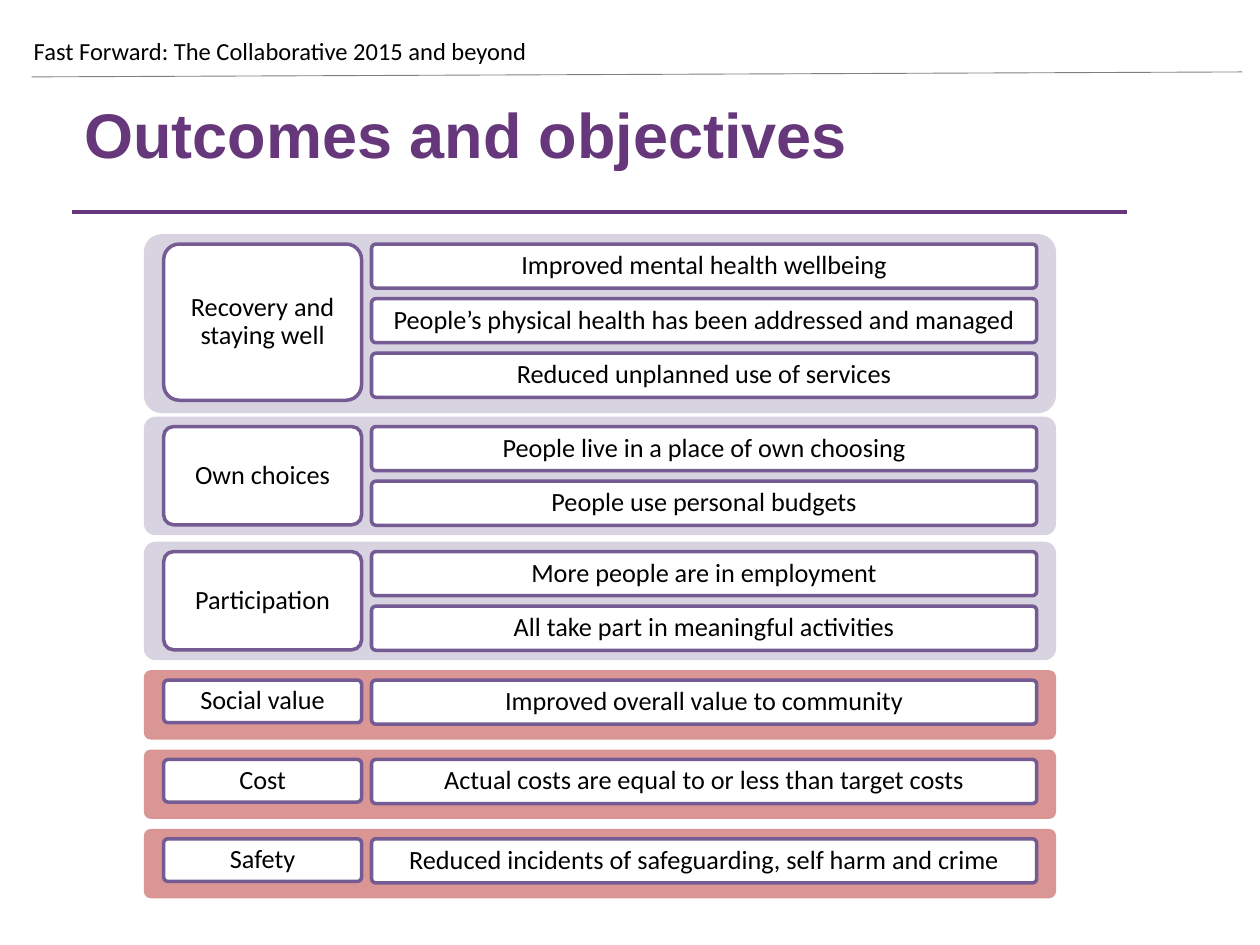
from dataclasses import dataclass

import pptx
import pptx.dml.color
import pptx.enum.shapes
import pptx.enum.text
import pptx.oxml.ns
import pptx.util
from lxml import etree
from pptx.util import Cm

PURPLE = "66377A"
OUTLINE = "745B93"
LILAC = "D8D3E0"
ROSE = "D99694"
WHITE = "FFFFFF"
BLACK = "000000"
GREY = "808080"

PANEL_LEFT, PANEL_WIDTH = 2.9, 18.39
PANEL_PADDING = 0.2
OUTCOME_LEFT, OUTCOME_WIDTH = 3.3, 3.99
OBJECTIVE_LEFT, OBJECTIVE_WIDTH = 7.49, 13.41
OBJECTIVE_HEIGHT, OBJECTIVE_PITCH = 0.89, 1.1


@dataclass
class Outcome:
    name: str
    objectives: list[str]
    color: str
    top: float
    height: float
    name_height: float


OUTCOMES = [
    Outcome(
        "Recovery and staying well",
        [
            "Improved mental health wellbeing",
            "People’s physical health has been addressed and managed",
            "Reduced unplanned use of services",
        ],
        LILAC, 4.72, 3.61, 3.15,
    ),
    Outcome(
        "Own choices",
        ["People live in a place of own choosing", "People use personal budgets"],
        LILAC, 8.4, 2.39, 1.98,
    ),
    Outcome(
        "Participation",
        ["More people are in employment", "All take part in meaningful activities"],
        LILAC, 10.92, 2.39, 1.98,
    ),
    Outcome("Social value", ["Improved overall value to community"],
            ROSE, 13.51, 1.4, 0.86),
    Outcome("Cost", ["Actual costs are equal to or less than target costs"],
            ROSE, 15.11, 1.4, 0.86),
    Outcome("Safety", ["Reduced incidents of safeguarding, self harm and crime"],
            ROSE, 16.71, 1.4, 0.86),
]


def rgb(color: str) -> pptx.dml.color.RGBColor:
    return pptx.dml.color.RGBColor.from_string(color)


def set_font(paragraph, name: str, size: int, color: str, bold: bool = False) -> None:
    paragraph.font.name = name
    paragraph.font.size = pptx.util.Pt(size)
    paragraph.font.bold = bold
    paragraph.font.color.rgb = rgb(color)


def add_panel(slide, left: float, top: float, width: float, height: float, color: str):
    """Add a filled rounded rectangle without outline."""
    panel = slide.shapes.add_shape(
        pptx.enum.shapes.MSO_SHAPE.ROUNDED_RECTANGLE,
        Cm(left), Cm(top), Cm(width), Cm(height),
    )
    panel.adjustments[0] = 0.1
    panel.shadow.inherit = False
    panel.fill.solid()
    panel.fill.fore_color.rgb = rgb(color)
    panel.line.fill.background()
    return panel


def add_card(slide, text: str, left: float, top: float, width: float,
             height: float, side_margin: float) -> None:
    """Add a white outlined panel with centred text."""
    card = add_panel(slide, left, top, width, height, WHITE)
    card.line.color.rgb = rgb(OUTLINE)
    card.line.width = pptx.util.Pt(2)
    frame = card.text_frame
    frame.word_wrap = True
    frame.vertical_anchor = pptx.enum.text.MSO_ANCHOR.MIDDLE
    frame.margin_left = frame.margin_right = Cm(side_margin)
    frame.margin_top = frame.margin_bottom = Cm(0.08)
    frame.text = text
    paragraph = frame.paragraphs[0]
    paragraph.alignment = pptx.enum.text.PP_ALIGN.CENTER
    paragraph.line_spacing = 0.9
    set_font(paragraph, "Calibri", 15, BLACK)


def add_outcome(slide, outcome: Outcome) -> None:
    add_panel(slide, PANEL_LEFT, outcome.top, PANEL_WIDTH, outcome.height, outcome.color)
    first_top = outcome.top + PANEL_PADDING
    add_card(slide, outcome.name, OUTCOME_LEFT, first_top,
             OUTCOME_WIDTH, outcome.name_height, 0.1)
    for row, objective in enumerate(outcome.objectives):
        add_card(slide, objective, OBJECTIVE_LEFT, first_top + row * OBJECTIVE_PITCH,
                 OBJECTIVE_WIDTH, OBJECTIVE_HEIGHT, 0.36)


def add_rule(slide, start: tuple[float, float], end: tuple[float, float],
             color: str, weight: float) -> None:
    rule = slide.shapes.add_connector(
        pptx.enum.shapes.MSO_CONNECTOR.STRAIGHT,
        Cm(start[0]), Cm(start[1]), Cm(end[0]), Cm(end[1]),
    )
    rule.line.color.rgb = rgb(color)
    rule.line.width = pptx.util.Pt(weight)
    etree.SubElement(rule._element.spPr, pptx.oxml.ns.qn("a:effectLst"))


def add_heading(slide, text: str, left: float, top: float, width: float, height: float,
                font: str, size: int, color: str, bold: bool, wrap: bool) -> None:
    heading = slide.shapes.add_textbox(Cm(left), Cm(top), Cm(width), Cm(height))
    frame = heading.text_frame
    frame.word_wrap = wrap
    frame.auto_size = pptx.enum.text.MSO_AUTO_SIZE.SHAPE_TO_FIT_TEXT
    frame.text = text
    set_font(frame.paragraphs[0], font, size, color, bold)


def main() -> None:
    presentation = pptx.Presentation()
    presentation.slide_width = Cm(25.4)
    presentation.slide_height = Cm(19.05)
    slide = presentation.slides.add_slide(presentation.slide_layouts[6])

    add_rule(slide, (25.04, 1.45), (0.64, 1.55), GREY, 0.5)
    add_heading(slide, "Fast Forward: The Collaborative 2015 and beyond",
                0.43, 0.61, 19.89, 0.86, "Calibri", 14, BLACK, bold=False, wrap=True)
    add_heading(slide, "Outcomes and objectives",
                1.45, 1.8, 16.05, 1.8, "Arial", 36, PURPLE, bold=True, wrap=False)
    add_rule(slide, (1.45, 4.27), (22.71, 4.27), PURPLE, 2)
    for outcome in OUTCOMES:
        add_outcome(slide, outcome)

    presentation.save("out.pptx")


if __name__ == "__main__":
    main()
